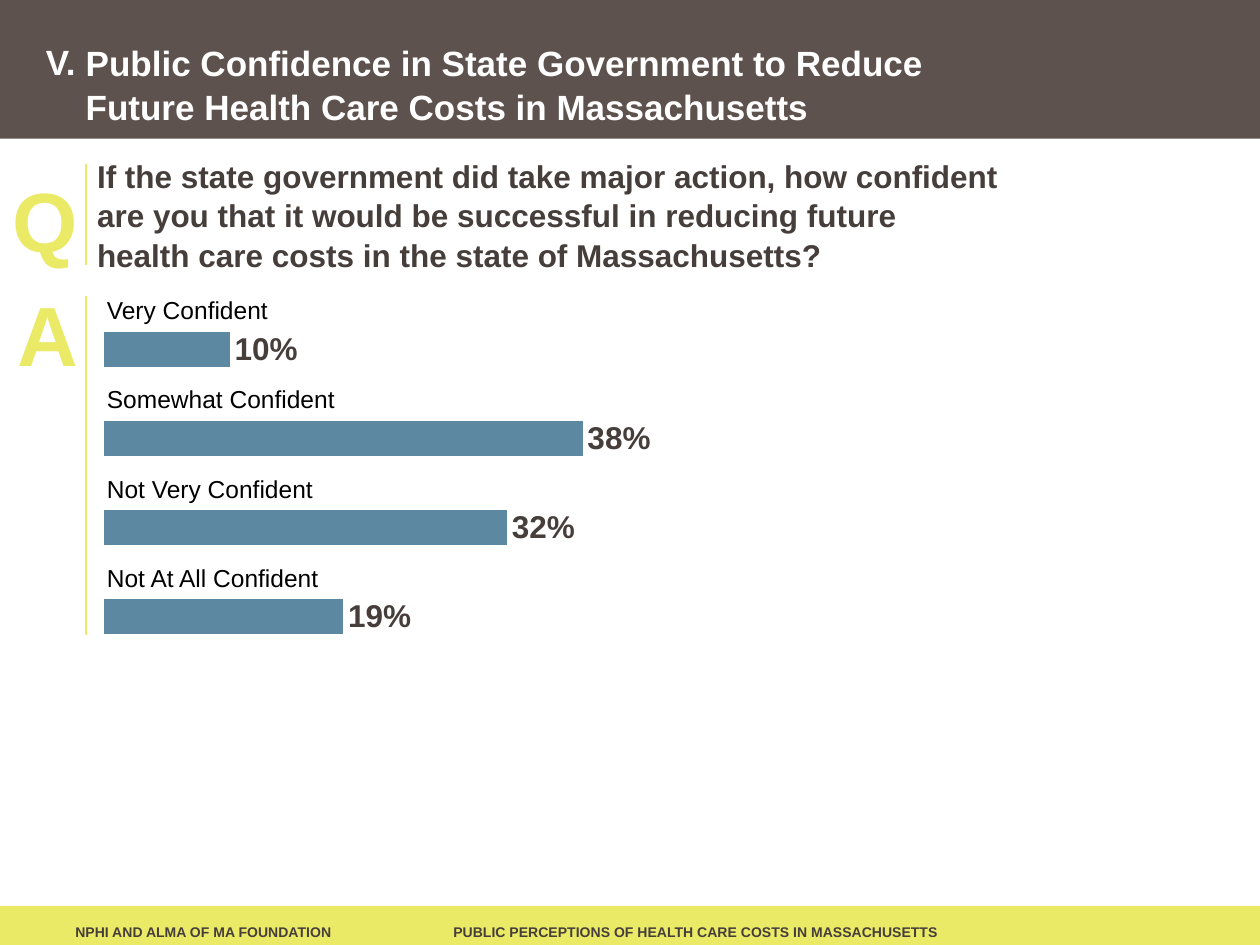
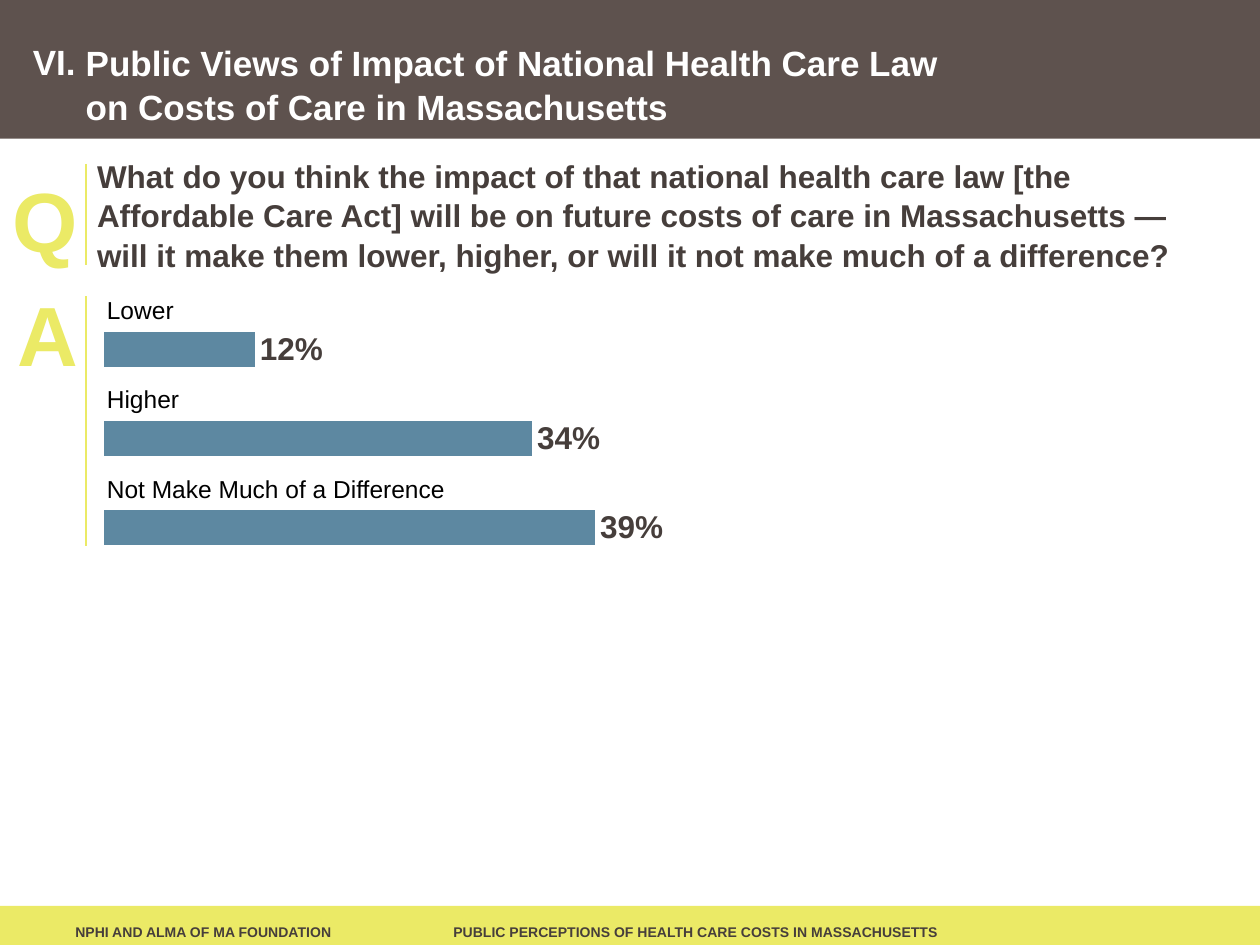
from lxml.etree import SubElement
from pptx import Presentation
from pptx.chart.data import CategoryChartData
from pptx.dml.color import RGBColor
from pptx.enum.chart import XL_CHART_TYPE, XL_LABEL_POSITION
from pptx.enum.shapes import MSO_CONNECTOR, MSO_SHAPE
from pptx.enum.text import MSO_ANCHOR, MSO_AUTO_SIZE, PP_ALIGN
from pptx.oxml import parse_xml
from pptx.oxml.ns import nsdecls, qn
from pptx.util import Inches, Pt

HUES = {"band": "5E524E", "lime": "EBEA66", "ink": "463E3B",
        "bar": "5D88A1", "white": "FFFFFF", "black": "000000"}
FONT = "Arial"
WIDE, HIGH = Inches(10), Inches(7.5)
COL, ROW = WIDE / 100, HIGH / 75
SLOTS = 7
STEP = 7.1

HEAD = (0, 0, 100, 11)
FOOT = (0, 71.9, 100, 3.1)
ASK = (6.7, 14.7, 90, 4.6)
REPLY = (6.7, 22.7, 90, 52.5)
RULE = 6.8

PAGES = [
    ("V.",
     "Public Confidence in State Government to Reduce\n"
     "Future Health Care Costs in Massachusetts",
     "If the state government did take major action, how confident\n"
     "are you that it would be successful in reducing future\n"
     "health care costs in the state of Massachusetts?",
     {"Very Confident": 0.1, "Somewhat Confident": 0.38,
      "Not Very Confident": 0.32, "Not At All Confident": 0.19}),
    ("VI.",
     "Public Views of Impact of National Health Care Law\n"
     "on Costs of Care in Massachusetts",
     "What do you think the impact of that national health care law [the "
     "Affordable Care Act] will be on future costs of care in Massachusetts — "
     "will it make them lower, higher, or will it not make much of a difference?",
     {"Lower": 0.12, "Higher": 0.34, "Not Make Much of a Difference": 0.39}),
]


def hue(name):
    """Return a named colour."""
    return RGBColor.from_string(HUES[name])


def span(box):
    """Turn a box in columns and rows into slide lengths."""
    x, y, w, h = box
    return int(x * COL), int(y * ROW), int(w * COL), int(h * ROW)


def style(font, size, tint, bold=True):
    """Set the face, size, weight and colour of a font."""
    font.name, font.size, font.bold = FONT, Pt(size), bold
    font.color.rgb = hue(tint)


def write(frame, text, size, tint, bold=True, align=PP_ALIGN.LEFT,
          anchor=MSO_ANCHOR.TOP):
    """Write one paragraph, breaking it at each newline."""
    frame.word_wrap = True
    frame.auto_size = MSO_AUTO_SIZE.NONE
    frame.vertical_anchor = anchor
    para = frame.paragraphs[0]
    para.alignment, para.line_spacing = align, 1.05
    for i, line in enumerate(text.split("\n")):
        if i:
            para.add_line_break()
        run = para.add_run()
        run.text = line
        style(run.font, size, tint, bold)
    return para


def label(slide, box, text, size, tint, **look):
    """Add a text box and return its frame."""
    frame = slide.shapes.add_textbox(*span(box)).text_frame
    write(frame, text, size, tint, **look)
    return frame


def block(slide, box, tint):
    """Add a plain filled band."""
    shape = slide.shapes.add_shape(MSO_SHAPE.RECTANGLE, *span(box))
    shape.shadow.inherit = False
    shape.fill.solid()
    shape.fill.fore_color.rgb = hue(tint)
    shape.line.fill.background()


def rule(slide, top, end):
    """Draw the upright lime rule between two rows."""
    x, y, _, h = span((RULE, top, 0, end - top))
    line = slide.shapes.add_connector(MSO_CONNECTOR.STRAIGHT, x, y, x, y + h)
    line.line.color.rgb = hue("lime")
    line.line.width = Pt(1)
    SubElement(line.element.spPr, qn("a:effectLst"))


def frame_up(slide):
    """Draw the bands, footer, letters and rule that all slides share."""
    block(slide, HEAD, "band")
    block(slide, FOOT, "lime")
    _, top, _, _ = FOOT
    for left, wide, text in [
            (5, 28, "NPHI AND ALMA OF MA FOUNDATION"),
            (35, 55, "PUBLIC PERCEPTIONS OF HEALTH CARE COSTS IN MASSACHUSETTS")]:
        label(slide, (left, top + 0.9, wide, 2.2), text, 8, "ink",
              anchor=MSO_ANCHOR.MIDDLE)
    rule(slide, 13, 21)
    for mark, top in [("Q", 12.3), ("A", 21.3)]:
        frame = label(slide, (0, top, 7.2, 9.1), mark, 48, "lime",
                      align=PP_ALIGN.RIGHT)
        frame.margin_top = Inches(0.07)
        frame.word_wrap = False


def share(deck):
    """Move the shared parts into the layout and return it."""
    layout = deck.slide_layouts[1]
    for spare in list(layout.placeholders)[2:]:
        spare.element.getparent().remove(spare.element)
    slide = deck.slides.add_slide(layout)
    frame_up(slide)
    parts = [s for s in slide.shapes if not s.is_placeholder]
    for i, part in enumerate(parts):
        layout.shapes.element.insert(2 + i, part.element)
    return layout, slide


def head(slide, box, mark, text):
    """Place the numeral and the title in the head band."""
    x, y, w, h = box
    title = slide.shapes.title
    title.left, title.top, title.width, title.height = span(
        (x + 5.8, y + 2.6, w - 10, h - 2.6))
    write(title.text_frame, text, 20, "white")
    label(slide, (x + 0.6, y + 2.6, 6.4, h - 2.6), mark, 20, "white",
          align=PP_ALIGN.RIGHT)


def ask(slide, box, text):
    """Place the question in the body placeholder."""
    body = slide.placeholders[1]
    body.left, body.top, body.width, body.height = span(box)
    para = write(body.text_frame, text, 18, "ink", anchor=MSO_ANCHOR.MIDDLE)
    props = para._p.get_or_add_pPr()
    props.set("marL", "0")
    props.set("indent", "0")
    SubElement(props, qn("a:buNone"))


def bars(slide, box, rates):
    """Add the bar chart, filling its slots from the top."""
    data = CategoryChartData(number_format="0%")
    data.categories = [str(i + 1) for i in range(SLOTS)]
    data.add_series("Series 1", [None] * (SLOTS - len(rates)) + rates[::-1])
    chart = slide.shapes.add_chart(
        XL_CHART_TYPE.BAR_CLUSTERED, *span(box), data).chart
    chart.has_legend = chart.has_title = False
    style(chart.font, 18, "black", False)
    for axis in (chart.category_axis, chart.value_axis):
        axis.has_major_gridlines = False
        axis.visible = False
    chart.value_axis.minimum_scale = 0
    chart.value_axis.maximum_scale = 0.88
    plot = chart.plots[0]
    plot.gap_width, plot.vary_by_categories = 150, False
    fill = plot.series[0].format.fill
    fill.solid()
    fill.fore_color.rgb = hue("bar")
    plot.has_data_labels = True
    tags = plot.data_labels
    tags.show_value = True
    tags.position = XL_LABEL_POSITION.OUTSIDE_END
    tags.number_format, tags.number_format_is_linked = "0%", False
    style(tags.font, 18, "ink")
    area = chart.element.find(".//" + qn("c:plotArea"))
    for old in area.findall(qn("c:layout")):
        area.remove(old)
    sizes = {"x": 0.017, "y": 0.029, "w": 0.978, "h": 0.942}
    modes = '<c:xMode val="edge"/><c:yMode val="edge"/>'
    inner = "".join(f'<c:{k} val="{v}"/>' for k, v in sizes.items())
    area.insert(0, parse_xml(
        f'<c:layout {nsdecls("c")}><c:manualLayout>'
        f'<c:layoutTarget val="inner"/>{modes}{inner}'
        '</c:manualLayout></c:layout>'))


def reply(slide, box, votes):
    """Place the chart, its rule and a label above each bar."""
    x, y, _, _ = box
    bars(slide, box, list(votes.values()))
    rule(slide, y + 0.8, y + STEP * len(votes) - 0.7)
    for i, name in enumerate(votes):
        label(slide, (x + 0.8, y + 0.1 + i * STEP, 33.3, 3.4), name, 14,
              "black", bold=False)


def main():
    """Build and save the deck."""
    deck = Presentation()
    deck.slide_width, deck.slide_height = WIDE, HIGH
    layout, first = share(deck)
    for i, (mark, title, query, votes) in enumerate(PAGES):
        slide = deck.slides.add_slide(layout) if i else first
        head(slide, HEAD, mark, title)
        ask(slide, ASK, query)
        reply(slide, REPLY, votes)
    deck.save("out.pptx")


if __name__ == "__main__":
    main()
